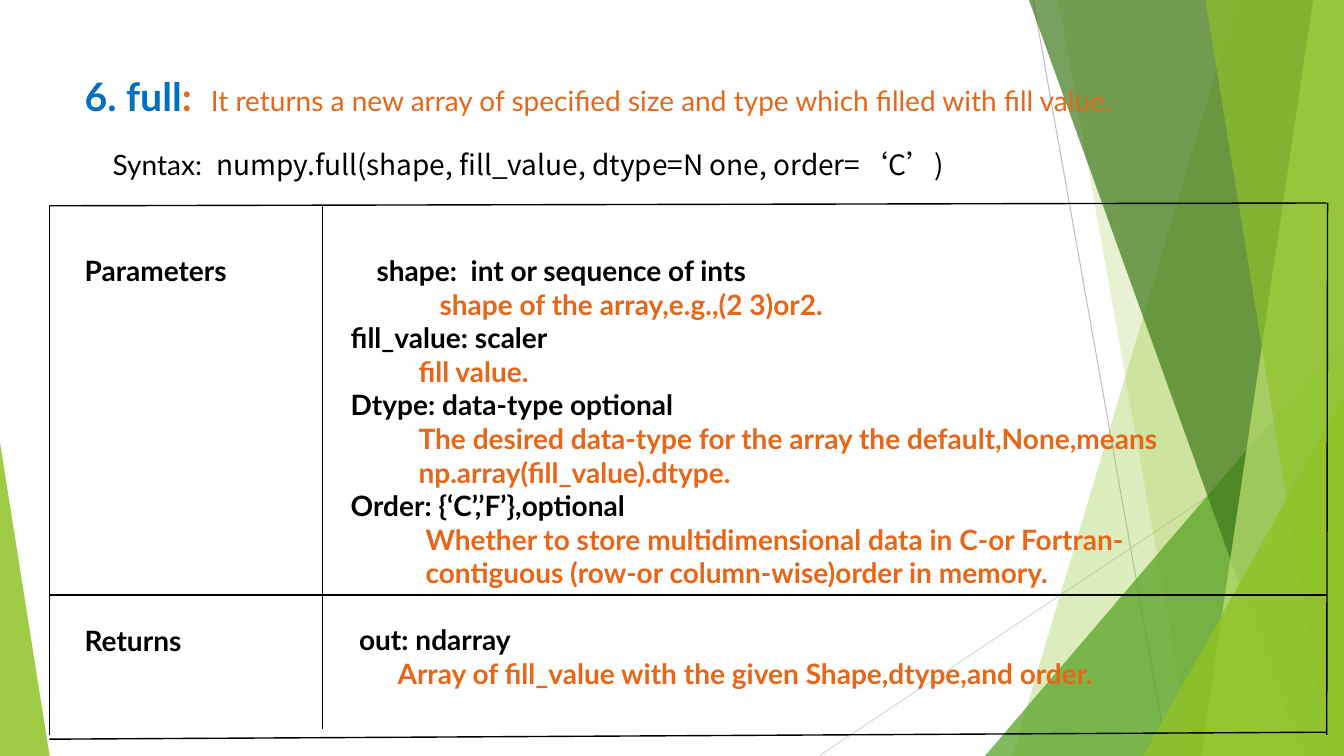
from pptx import Presentation
from pptx.dml.color import RGBColor
from pptx.enum.shapes import MSO_CONNECTOR as CONN, MSO_SHAPE as SHAPE
from pptx.oxml.ns import qn
from pptx.util import Pt
from lxml.etree import SubElement

W, H = 960, 540
BLACK, BLUE, ORANGE = "000000", "0070C0", "E76618"
GREEN, DEEP, FOREST, LIME = "90C226", "54A021", "3F7819", "C0E474"
LATO, NOTO = "Lato", "Noto Sans CJK SC"


def rgb(value):
    return RGBColor.from_string(value)


class Deck:
    def __init__(self, font, size):
        self.font, self.size = font, size
        self.prs = Presentation()
        self.prs.slide_width, self.prs.slide_height = Pt(W), Pt(H)
        self.s = self.prs.slides.add_slide(self.prs.slide_layouts[6])

    def line(self, x1, y1, x2, y2, color=BLACK, width=1):
        c = self.s.shapes.add_connector(CONN.STRAIGHT, Pt(x1), Pt(y1), Pt(x2), Pt(y2))
        c.line.color.rgb = rgb(color)
        c.line.width = Pt(width)
        SubElement(c._element.spPr, qn("a:effectLst"))

    def paint(self, sp, color, alpha):
        sp.shadow.inherit = False
        sp.line.fill.background()
        sp.fill.solid()
        sp.fill.fore_color.rgb = rgb(color)
        clr = sp._element.spPr.find(qn("a:solidFill"))[0]
        SubElement(clr, qn("a:alpha")).set("val", str(alpha * 1000))

    def band(self, top_x, bottom_x, color, alpha):
        fb = self.s.shapes.build_freeform(Pt(top_x), 0)
        fb.add_line_segments([(Pt(W), 0), (Pt(W), Pt(H)), (Pt(bottom_x), Pt(H))])
        self.paint(fb.convert_to_shape(), color, alpha)

    def triangle(self, x, y, w, apex, color, alpha):
        sp = self.s.shapes.add_shape(SHAPE.ISOSCELES_TRIANGLE, Pt(x), Pt(y), Pt(w), Pt(H - y))
        sp.adjustments[0] = apex
        self.paint(sp, color, alpha)

    def text(self, x, y, w, h, paragraphs):
        tf = self.s.shapes.add_textbox(Pt(x), Pt(y), Pt(w), Pt(h)).text_frame
        tf.word_wrap = True
        tf.margin_left = tf.margin_right = tf.margin_top = tf.margin_bottom = 0
        for i, (indent, runs) in enumerate(paragraphs):
            p = tf.add_paragraph() if i else tf.paragraphs[0]
            p._p.get_or_add_pPr().set("marL", str(Pt(indent)))
            for run in runs:
                self.run(p, *run)

    def run(self, p, text, color, bold=True, size=None, font=None):
        r = p.add_run()
        r.text = text
        f = r.font
        f.name, f.size, f.bold = font or self.font, Pt(size or self.size), bold
        f.color.rgb = rgb(color)
        SubElement(f._element, qn("a:ea")).set("typeface", font or self.font)


def main():
    d = Deck(LATO, 20)

    d.line(738, 0, 834, H, "BFBFBF", 0.75)
    d.line(W, 290, 585, H, "D9D9D9", 0.75)
    d.band(884, 723, GREEN, 30)
    d.band(756, 852, GREEN, 20)
    d.triangle(703.5, 240, 256.5, 1, DEEP, 72)
    d.band(735, 929.5, FOREST, 70)
    d.band(938, 858, LIME, 70)
    d.band(861, 949, GREEN, 65)
    d.triangle(816.5, 283, 143.5, 1, GREEN, 80)
    d.triangle(0, 316, 35.5, 0, GREEN, 85)

    d.text(60.5, 51.8, 860, 34, [(0, [
        ("6. full", BLUE, True, 28),
        (":  ", ORANGE, True, 28),
        ("It returns a new array of specified size and type which filled with fill value.", ORANGE, False),
    ])])
    d.text(80.5, 105.5, 700, 30, [(0, [
        ("Syntax:  ", BLACK, False),
        ("numpy.full(shape, fill_value, dtype=N one, order=‘C’)", BLACK, False, 20, NOTO),
    ])])

    parameters = [
        (18.5, "shape:  int or sequence of ints", BLACK),
        (63.5, "shape of the array,e.g.,(2 3)or2.", ORANGE),
        (0, "fill_value: scaler", BLACK),
        (48.5, "fill value.", ORANGE),
        (0, "Dtype: data-type optional", BLACK),
        (48.5, "The desired data-type for the array the default,None,means", ORANGE),
        (48.5, "np.array(fill_value).dtype.", ORANGE),
        (0, "Order: {‘C’,’F’},optional", BLACK),
        (53.5, "Whether to store multidimensional data in C-or Fortran-", ORANGE),
        (53.5, "contiguous (row-or column-wise)order in memory.", ORANGE),
    ]
    returns = [
        (6, "out: ndarray", BLACK),
        (33.5, "Array of fill_value with the given Shape,dtype,and order.", ORANGE),
    ]
    for label, y, rows in (("Parameters", 181, parameters), ("Returns", 445, returns)):
        d.text(60.5, y, 160, 24, [(0, [(label, BLACK)])])
        d.text(250.5, y, 680, 24 * len(rows),
               [(indent, [(text, color)]) for indent, text, color in rows])

    left, split, right = 35.3, 230.5, 947.7
    d.line(left, 525, left, 147)
    d.line(948.3, 145, right, 525)
    d.line(left, 147, right, 145)
    d.line(left, 528, right, 523)
    d.line(split, 147, split, 520.5)
    d.line(left, 425, right, 425)

    d.prs.save("out.pptx")


if __name__ == "__main__":
    main()
